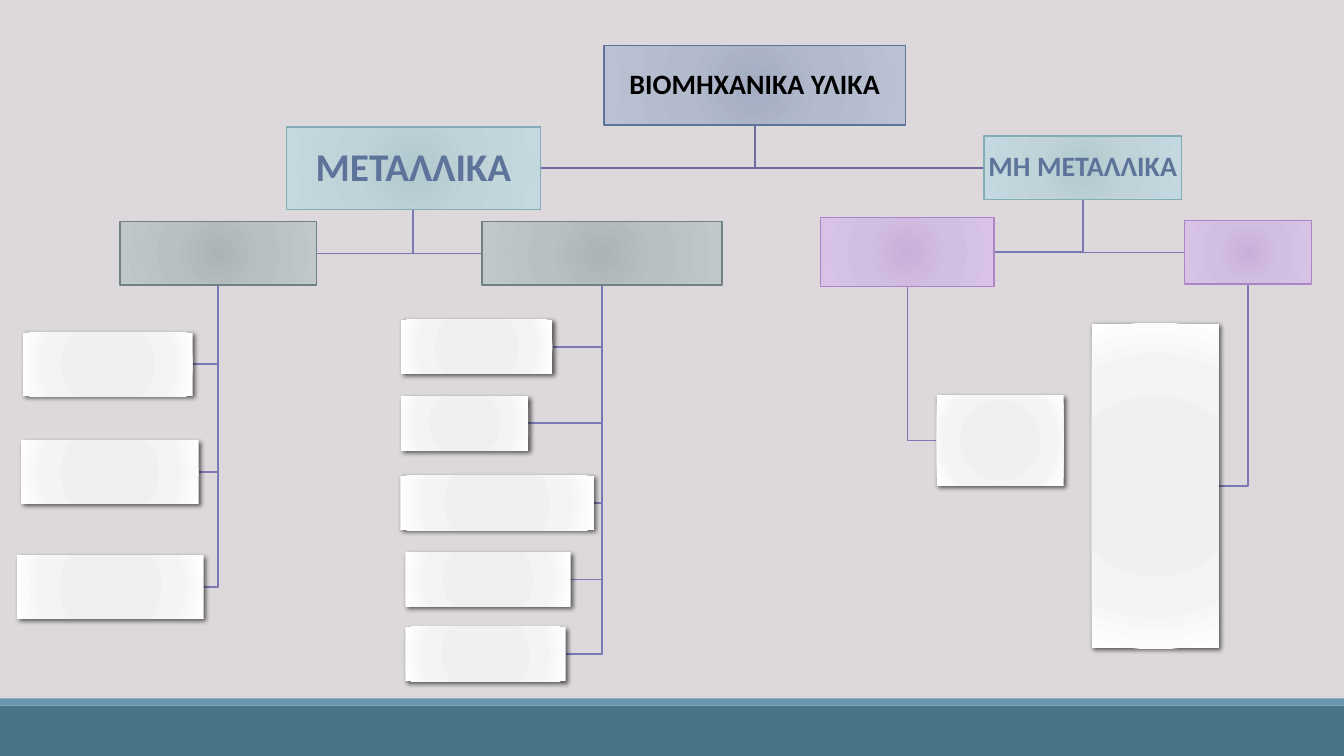
from dataclasses import dataclass

from lxml import etree
from pptx import Presentation
from pptx.dml.color import RGBColor
from pptx.enum.shapes import MSO_SHAPE
from pptx.enum.text import MSO_ANCHOR, MSO_AUTO_SIZE, PP_ALIGN
from pptx.oxml.ns import qn
from pptx.util import Inches, Pt


@dataclass(frozen=True)
class BoxStyle:
    stops: tuple
    line: str = ""
    text: str = ""


@dataclass(frozen=True)
class Theme:
    font: str = "Calibri"
    background: str = "DCD8DC"
    footer: str = "497389"
    footer_edge: str = "6997AF"
    root_link: str = "6C6A9F"
    link: str = "7B78B5"
    shadow: str = "000000"
    text_size: int = 20
    large_size: int = 28
    root: BoxStyle = BoxStyle(
        ((0, "A4ADC2"), (45, "B3BACC"), (100, "BAC1D3")), "5D739A", "000000")
    family: BoxStyle = BoxStyle(
        ((0, "B1C9CF"), (45, "BFD3D8"), (100, "C4D9DF")), "84ACB6", "5D739A")
    metal: BoxStyle = BoxStyle(
        ((0, "ACB4B6"), (45, "B9C0C1"), (100, "C1C8C9")), "6F8183")
    nonmetal: BoxStyle = BoxStyle(
        ((0, "C8B0D9"), (45, "D2BEE1"), (100, "D8C3E7")), "AD84C6")
    card: BoxStyle = BoxStyle(
        ((0, "EEEEEE"), (34, "F0F0F0"), (70, "F4F4F4"), (100, "FFFFFF")))


THEME = Theme()


@dataclass(frozen=True)
class Node:
    left: float
    top: float
    width: float
    height: float
    style: BoxStyle = THEME.card
    text: str = ""
    size: int = THEME.text_size
    children: tuple = ()

    @property
    def center(self):
        return self.left + self.width / 2

    @property
    def middle(self):
        return self.top + self.height / 2


def material_tree():
    ferrous = Node(1.19, 2.2, 1.95, 0.63, THEME.metal, children=(
        Node(0.23, 3.3, 1.68, 0.63),
        Node(0.21, 4.37, 1.76, 0.63),
        Node(0.17, 5.51, 1.85, 0.63),
    ))
    nonferrous = Node(4.78, 2.2, 2.38, 0.63, THEME.metal, children=(
        Node(3.98, 3.17, 1.5, 0.54),
        Node(3.98, 3.93, 1.26, 0.54),
        Node(3.97, 4.72, 1.92, 0.54),
        Node(4.02, 5.48, 1.64, 0.54),
        Node(4.02, 6.22, 1.59, 0.54),
    ))
    natural = Node(8.14, 2.16, 1.72, 0.68, THEME.nonmetal, children=(
        Node(9.29, 3.92, 1.26, 0.9),
    ))
    synthetic = Node(11.75, 2.19, 1.26, 0.63, THEME.nonmetal, children=(
        Node(10.83, 3.21, 1.26, 3.22),
    ))
    metals = Node(2.84, 1.26, 2.52, 0.82, THEME.family, "ΜΕΤΑΛΛΙΚΑ",
                  THEME.large_size, (ferrous, nonferrous))
    nonmetals = Node(9.76, 1.35, 1.96, 0.63, THEME.family, "ΜΗ ΜΕΤΑΛΛΙΚΑ",
                     children=(natural, synthetic))
    return Node(5.99, 0.45, 2.99, 0.79, THEME.root, "ΒΙΟΜΗΧΑΝΙΚΑ ΥΛΙΚΑ",
                children=(metals, nonmetals))


def rgb(color):
    return RGBColor.from_string(color)


def add_color(parent, color):
    return etree.SubElement(parent, qn("a:srgbClr"), val=color)


def set_radial_fill(sp, stops):
    sp.fill.gradient()
    grad = sp._element.spPr.find(qn("a:gradFill"))
    for child in list(grad):
        grad.remove(child)
    stop_list = etree.SubElement(grad, qn("a:gsLst"))
    for position, color in stops:
        add_color(etree.SubElement(stop_list, qn("a:gs"), pos=str(position * 1000)), color)
    radial = etree.SubElement(grad, qn("a:path"), path="circle")
    etree.SubElement(radial, qn("a:fillToRect"), {side: "100000" for side in "ltrb"})


def add_shadow(sp):
    effects = sp._element.spPr.find(qn("a:effectLst"))
    outer = etree.SubElement(
        effects, qn("a:outerShdw"), blurRad=str(Pt(3.5)), dist=str(Pt(2)),
        dir="2700000", algn="tl", rotWithShape="0")
    etree.SubElement(add_color(outer, THEME.shadow), qn("a:alpha"), val="60000")


def write_label(sp, node):
    tf = sp.text_frame
    tf.auto_size = MSO_AUTO_SIZE.NONE
    tf.word_wrap = True
    tf.vertical_anchor = MSO_ANCHOR.MIDDLE
    tf.margin_left = tf.margin_right = tf.margin_top = tf.margin_bottom = Inches(0.01)
    p = tf.paragraphs[0]
    p.text = node.text
    p.alignment = PP_ALIGN.CENTER
    p.line_spacing = 0.9
    p.font.name = THEME.font
    p.font.size = Pt(node.size)
    p.font.bold = True
    p.font.color.rgb = rgb(node.style.text)


def format_box(sp, node):
    sp.shadow.inherit = False
    set_radial_fill(sp, node.style.stops)
    if node.style.line:
        sp.line.color.rgb = rgb(node.style.line)
        sp.line.width = Pt(1)
    else:
        sp.line.fill.background()
        add_shadow(sp)
    if node.text:
        write_label(sp, node)


def add_bar(s, top, height, color):
    sp = s.shapes.add_shape(
        MSO_SHAPE.RECTANGLE, 0, Inches(top), Inches(13.33), Inches(height))
    sp.shadow.inherit = False
    sp.fill.solid()
    sp.fill.fore_color.rgb = rgb(color)
    sp.line.fill.background()


def add_elbow(s, parent, child, color):
    x, y = Inches(parent.center), Inches(child.middle)
    end = child.left if child.center > parent.center else child.left + child.width
    builder = s.shapes.build_freeform(x, Inches(parent.top + parent.height))
    builder.add_line_segments([(x, y), (Inches(end), y)], close=False)
    sp = builder.convert_to_shape()
    sp.shadow.inherit = False
    sp.fill.background()
    sp.line.color.rgb = rgb(color)
    sp.line.width = Pt(1.25)


def add_links(s, node, color):
    for child in node.children:
        add_links(s, child, THEME.link)
        add_elbow(s, node, child, color)


def add_boxes(s, nodes):
    for node in nodes:
        sp = s.shapes.add_shape(
            MSO_SHAPE.RECTANGLE, Inches(node.left), Inches(node.top),
            Inches(node.width), Inches(node.height))
        format_box(sp, node)
        add_boxes(s, node.children)


def place_title(s, node):
    sp = s.shapes.title
    sp.left, sp.top = Inches(node.left), Inches(node.top)
    sp.width, sp.height = Inches(node.width), Inches(node.height)
    format_box(sp, node)


def main():
    prs = Presentation()
    prs.slide_width, prs.slide_height = Inches(13.33), Inches(7.5)
    s = prs.slides.add_slide(prs.slide_layouts[5])
    s.background.fill.solid()
    s.background.fill.fore_color.rgb = rgb(THEME.background)
    add_bar(s, 7, 0.5, THEME.footer)
    add_bar(s, 6.93, 0.07, THEME.footer_edge)
    root = material_tree()
    add_links(s, root, THEME.root_link)
    place_title(s, root)
    add_boxes(s, root.children)
    prs.save("out.pptx")


if __name__ == "__main__":
    main()
